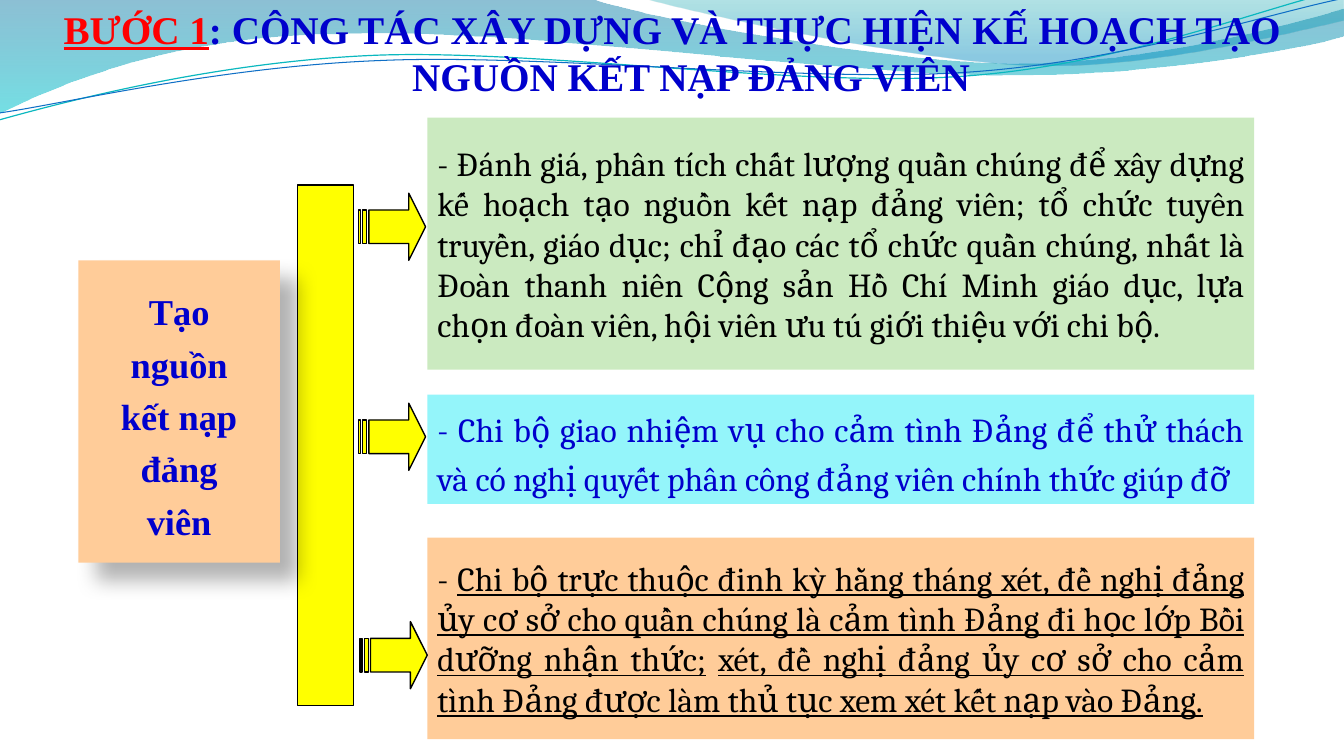
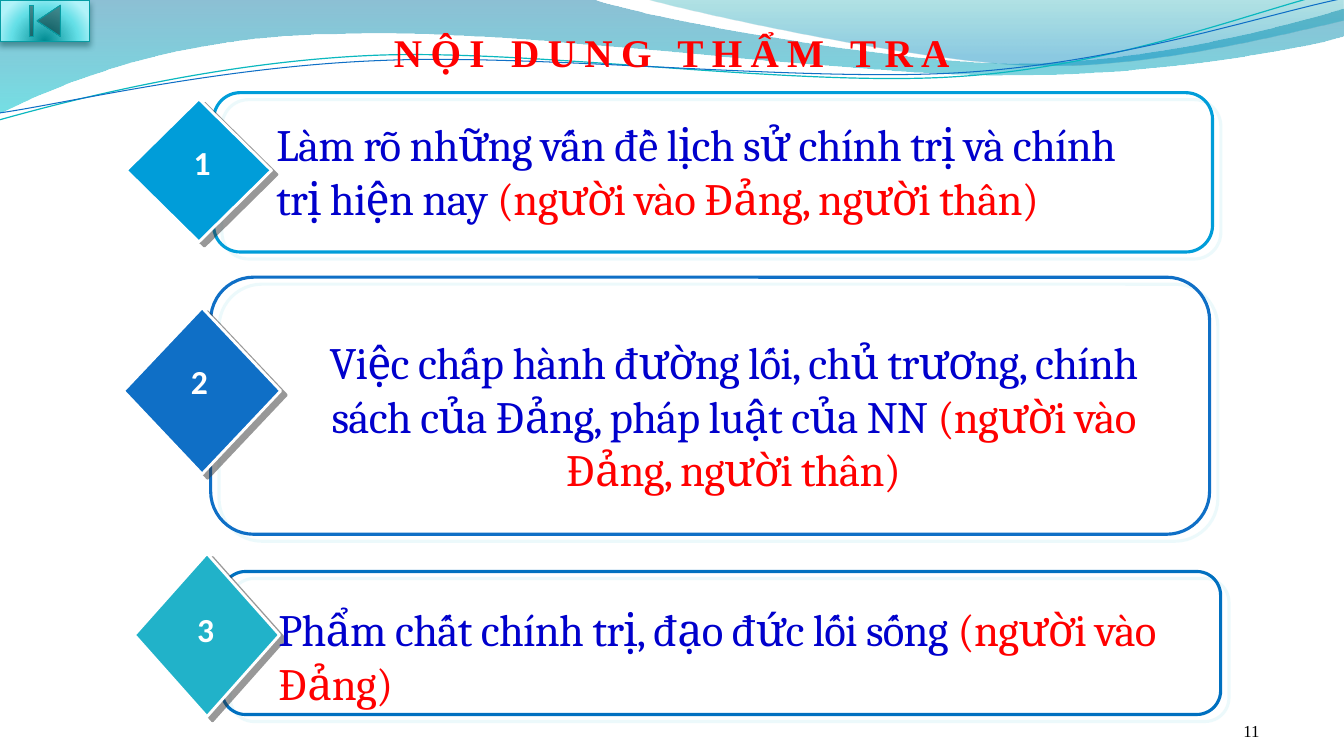
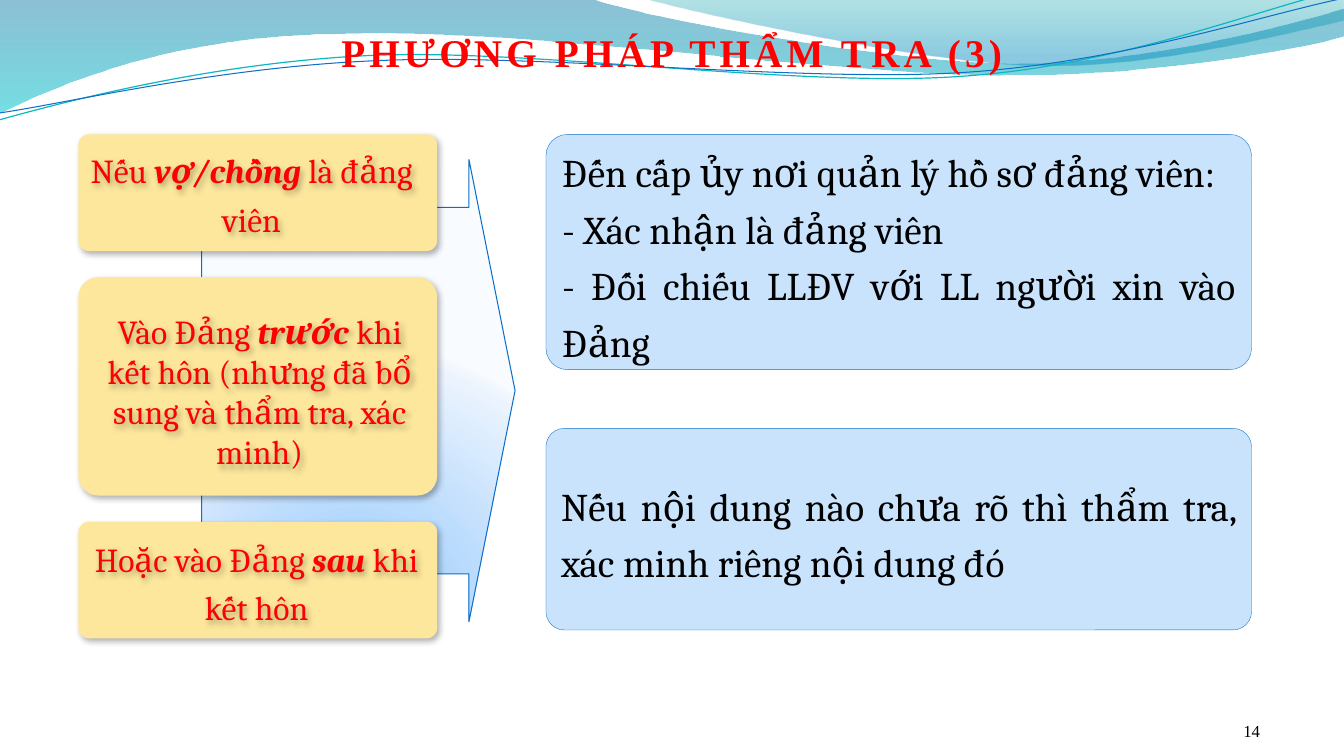
import pptx
import pptx.dml.color
import pptx.enum.shapes
import pptx.enum.text
import pptx.oxml
import pptx.oxml.ns
import pptx.util

Pt = pptx.util.Pt
RGB = pptx.dml.color.RGBColor
KIND = pptx.enum.shapes.MSO_SHAPE
ALIGN = pptx.enum.text.PP_ALIGN
ANCHOR = pptx.enum.text.MSO_ANCHOR
qn = pptx.oxml.ns.qn

# Colours
BLACK = RGB(0x00, 0x00, 0x00)
WHITE = RGB(0xFF, 0xFF, 0xFF)
RED = RGB(0xFF, 0x00, 0x00)
NAVY = RGB(0x00, 0x00, 0xCC)
BLUE = RGB(0x0F, 0x6F, 0xC6)
SKY = RGB(0x00, 0x9D, 0xD9)
AZURE = RGB(0x00, 0x70, 0xC0)
TEAL = RGB(0x21, 0xB2, 0xC9)
AQUA = RGB(0x0A, 0xB8, 0xBF)
RIM = RGB(0x06, 0x9C, 0xA3)
GREEN = RGB(0xCB, 0xEA, 0xC0)
CYAN = RGB(0x94, 0xF5, 0xFA)
PEACH = RGB(0xFF, 0xCC, 0x99)
YELLOW = RGB(0xFF, 0xFF, 0x00)
CREAM = RGB(0xFC, 0xE7, 0x9C)
PALE = RGB(0xC8, 0xE3, 0xFB)
MIST = RGB(0xDB, 0xF5, 0xF9)
GREY = RGB(0x33, 0x33, 0x33)
DEEP = RGB(0x02, 0x4B, 0x4E)

# Fonts
SERIF = "Times New Roman"
BODY = "Cambria"
SANS = "Calibri"

# Gradients: stops of (position, colour, opacity), all in percent
DOWN = '<a:lin ang="5400000" scaled="0"/>'
GLOW = ('<a:path path="circle"><a:fillToRect l="50000" t="130000" '
        'r="50000" b="-30000"/></a:path>')
WAVE = ([(0, RGB(0x00, 0x74, 0xA1), 45), (100, RGB(0x00, 0xC6, 0xCF), 55)], DOWN)
CREST = ([(0, RGB(0x00, 0xA1, 0xA9), 30), (80, RGB(0x00, 0x8B, 0xBF), 45)], DOWN)
ARROW = ([(0, RGB(0x8B, 0xC2, 0xF1), 100), (43, RGB(0xB9, 0xDB, 0xFD), 100),
          (93, RGB(0xEA, 0xF3, 0xFE), 100), (100, RGB(0xF8, 0xFB, 0xFF), 100)], GLOW)
BUTTON = ([(0, RGB(0x00, 0x8A, 0x91), 100), (68, RGB(0x64, 0xDF, 0xE7), 100),
           (100, RGB(0xB1, 0xF3, 0xF9), 100)], GLOW)

# Shadows: colour, opacity, blur, distance, angle
DROP = (BLACK, 30, 15, 18, 45)
SOFT = (BLACK, 30, 4.5, 2.6, 53)
HALO = (MIST, 50, 0, 7.8, 40)
HARD = (GREY, 50, 0, 5, 37)
UNDER = (DEEP, 48, 4.5, 3, 90)


def parse(tag, inner="", attrs=""):
    space = pptx.oxml.ns.nsdecls("a")
    return pptx.oxml.parse_xml(f"<a:{tag} {space} {attrs}>{inner}</a:{tag}>")


def tint(color, alpha):
    return f'<a:srgbClr val="{color}"><a:alpha val="{alpha * 1000}"/></a:srgbClr>'


def shade(shape, shadow):
    shape.shadow.inherit = False
    if shadow:
        color, alpha, blur, dist, angle = shadow
        attrs = (f'blurRad="{Pt(blur)}" dist="{Pt(dist)}" dir="{angle * 60000}" '
                 'algn="tl" rotWithShape="0"')
        effects = shape.element.spPr.find(qn("a:effectLst"))
        effects.append(parse("outerShdw", tint(color, alpha), attrs))


def paint(shape, fill=None, line=None, width=1, shadow=None):
    """Set fill (colour or gradient), line and shadow."""
    if fill is None:
        shape.fill.background()
    else:
        shape.fill.solid()
        if isinstance(fill, RGB):
            shape.fill.fore_color.rgb = fill
        else:
            stops, course = fill
            marks = "".join(f'<a:gs pos="{pos * 1000}">{tint(color, alpha)}</a:gs>'
                            for pos, color, alpha in stops)
            props = shape.element.spPr
            props.replace(props.find(qn("a:solidFill")),
                          parse("gradFill", f"<a:gsLst>{marks}</a:gsLst>{course}"))
    if line is None:
        shape.line.fill.background()
    else:
        shape.line.color.rgb = line
        shape.line.width = Pt(width)
    shade(shape, shadow)


def draw(slide, kind, box, adjust=(), **look):
    shape = slide.shapes.add_shape(kind, *map(Pt, box))
    for index, value in enumerate(adjust):
        shape.adjustments[index] = value
    paint(shape, **look)
    return shape


def write(shape, *parts, size=24, font=BODY, color=BLACK, bold=False,
          align=ALIGN.LEFT, anchor=ANCHOR.MIDDLE, leading=None, spacing=0,
          hang=0, indent=0, wrap=True):
    """Fill a shape with text; a part is a string or (string, font changes)."""
    frame = shape.text_frame
    frame.word_wrap = wrap
    frame.vertical_anchor = anchor
    para = frame.paragraphs[0]
    paras = [para]
    for part in parts:
        text, changes = (part, {}) if isinstance(part, str) else part
        for number, piece in enumerate(text.split("\n")):
            if number:
                para = frame.add_paragraph()
                paras.append(para)
            run = para.add_run()
            run.text = piece
            run.font.size = Pt(size)
            run.font.name = font
            run.font.bold = changes.get("bold", bold)
            run.font.italic = changes.get("italic", False)
            run.font.underline = changes.get("under", False)
            run.font.color.rgb = changes.get("color", color)
            if spacing:
                run.font._element.set("spc", str(round(spacing * 100)))
    for para in paras:
        para.alignment = align
        if leading:
            para.line_spacing = leading
        if hang or indent:
            props = para._p.get_or_add_pPr()
            props.set("marL", str(Pt(hang)))
            props.set("indent", str(Pt(indent)))


def label(slide, box, *parts, shadow=None, **form):
    shape = slide.shapes.add_textbox(*map(Pt, box))
    if shadow:
        shade(shape, shadow)
    write(shape, *parts, **{"anchor": ANCHOR.TOP, **form})


def trace(slide, start, legs, close=False, **look):
    """Draw an outline; a leg is a line's end or a curve's three points."""
    points = [(Pt(x), Pt(y)) for leg in legs for x, y in zip(leg[::2], leg[1::2])]
    pen = slide.shapes.build_freeform(*map(Pt, start), scale=1.0)
    pen.add_line_segments(points, close=close)
    shape = pen.convert_to_shape()

    # Join each curve's three points into one segment
    course = next(shape.element.spPr.iter(qn("a:path")))
    lines = iter(course.findall(qn("a:lnTo")))
    for leg in legs:
        group = [next(lines) for _ in leg[::2]]
        if len(group) == 3:
            curve = parse("cubicBezTo")
            group[0].addprevious(curve)
            for line in group:
                curve.append(line[0])
                course.remove(line)
    paint(shape, **look)
    return shape


def waves(deck, slide):
    """Draw the header waves and move them to the slide master."""
    shapes = [
        trace(slide, (0, -0.7), [
            (422.6, -0.7), (456.5, 12.2, 637.2, 45.4, 727.9, 45.4),
            (818.6, 45.4, 920.2, 18.7, 959.8, 6.5), (961.2, 25.9),
            (944, 31.7, 835.2, 54.7, 715.7, 54), (596.9, 54, 366.5, 20.2, 247, 24.5),
            (123.8, 25.2, 43.9, 59.8, -0.7, 81.4), (0, -0.7)], close=True, fill=WAVE),
        trace(slide, (460, -0.7), [
            (488.9, 7.9, 654.5, 44.6, 738, 46.8), (821.5, 49.7, 923, 23, 959.8, 15.1),
            (959.8, 0), (460, -0.7)], close=True, fill=CREST),
        trace(slide, (-0.7, 85.7), [
            (46.1, 72.7, 151.9, 44.6, 265.7, 39.6), (379.4, 34.6, 568.1, 62.6, 684, 54.7),
            (799.2, 47.5, 900.7, 5.8, 958.3, -7.2)], line=AQUA, width=0.85),
        trace(slide, (0, 80.6), [
            (45.4, 74.2, 157, 47.5, 272.2, 43.2), (386.6, 38.2, 573.1, 59, 687.6, 51.8),
            (802.8, 44.6, 903.6, 10.1, 960.5, -1.4)], line=BLUE, width=0.75),
    ]
    for shape in shapes:
        deck.slide_master.shapes.element.append(shape.element)


def head(slide, *parts, height=58.3, **form):
    label(slide, (0, 0, 960, height), *parts, size=28, font=SERIF, bold=True,
          align=ALIGN.CENTER, **form)


def page(slide, number):
    label(slide, (881, 511.2, 74.9, 21.6), number, size=12, font=SERIF)


def sources(slide):
    head(slide, ("BƯỚC 1", {"color": RED, "under": True}),
         ": CÔNG TÁC XÂY DỰNG VÀ THỰC HIỆN KẾ HOẠCH TẠO NGUỒN KẾT NẠP ĐẢNG VIÊN",
         height=75, color=NAVY, hang=27, indent=-27)

    # Task panels
    under = {"under": True}
    panels = [
        (84, 180, GREEN, {}, [
            "- Đánh giá, phân tích chất lượng quần chúng để xây dựng kế hoạch tạo nguồn "
            "kết nạp đảng viên; tổ chức tuyên truyền, giáo dục; chỉ đạo các tổ chức quần "
            "chúng, nhất là Đoàn thanh niên Cộng sản Hồ Chí Minh giáo dục, lựa chọn đoàn "
            "viên, hội viên ưu tú giới thiệu với chi bộ."]),
        (282, 78, CYAN, {"color": NAVY, "leading": 1.2, "indent": -27}, [
            "- Chi bộ giao nhiệm vụ cho cảm tình Đảng để thử thách và có nghị quyết phân "
            "công đảng viên chính thức giúp đỡ"]),
        (384, 144, PEACH, {}, [
            "- ",
            ("Chi bộ trực thuộc đinh kỳ hằng tháng xét, đề nghị đảng ủy cơ sở cho quần "
             "chúng là cảm tình Đảng đi học lớp Bồi dưỡng nhận thức;", under),
            " ",
            ("xét, đề nghị đảng ủy cơ sở cho cảm tình Đảng được làm thủ tục xem xét kết "
             "nạp vào Đảng.", under)]),
    ]
    for top, height, fill, form, parts in panels:
        panel = draw(slide, KIND.RECTANGLE, (305.3, top, 590.6, height), fill=fill)
        write(panel, *parts, align=ALIGN.JUSTIFY, **form)

    # Bar with arrows
    for left, top in [(256, 138), (256, 288), (257.2, 444)]:
        draw(slide, KIND.STRIPED_RIGHT_ARROW, (left, top, 48, 48), (0.5, 0.25),
             fill=YELLOW, line=BLACK)
    draw(slide, KIND.RECTANGLE, (212.4, 132, 40.2, 372), fill=YELLOW, line=BLACK)

    # Topic card
    card = draw(slide, KIND.RECTANGLE, (56, 186, 144, 216), fill=PEACH, shadow=DROP)
    write(card, "Tạo\nnguồn\nkết nạp\nđảng\nviên", size=26, font=SERIF, color=NAVY,
          bold=True, align=ALIGN.CENTER, leading=1.2, wrap=False)


def checks(slide):
    page(slide, "11")
    head(slide, "NỘI DUNG THẨM TRA", color=RED, leading=1.5, spacing=6)

    # Numbered rows: frame, diamond, text and number boxes
    rows = [
        (SKY, SKY, (152.6, 66.2, 713.5, 113.8), (90.2, 70.6, 103.7, 102.2),
         (190.3, 80, 643.7, 85), (115.2, 98), ALIGN.LEFT,
         "Làm rõ những vấn đề lịch sử chính trị và chính trị hiện nay ",
         "(người vào Đảng, người thân)"),
        (BLUE, BLUE, (150.5, 198, 713.5, 183.6), (88.2, 219.8, 112.3, 118.8),
         (198.2, 235.4, 651.6, 172.8), (113.3, 254.2), ALIGN.CENTER,
         "Việc chấp hành đường lối, chủ trương, chính sách của Đảng, pháp luật của NN ",
         "(người vào Đảng, người thân)"),
        (AZURE, TEAL, (158.4, 408.2, 713.5, 102.2), (96, 395.3, 103.7, 116.6),
         (191.8, 426.2, 663.8, 85), (117.8, 431.3), ALIGN.LEFT,
         "Phẩm chất chính trị, đạo đức lối sống ", "(người vào Đảng)"),
    ]
    for number, row in enumerate(rows, 1):
        edge, fill, frame, gem, box, spot, align, text, note = row
        draw(slide, KIND.ROUNDED_RECTANGLE, frame, (0.167,), line=edge, width=2.25,
             shadow=HALO)
        draw(slide, KIND.DIAMOND, gem, fill=fill, line=WHITE, width=2, shadow=HARD)
        label(slide, box, text, (note, {"color": RED}), size=32, color=NAVY,
              spacing=-0.5, align=align)
        label(slide, (*spot, 58.3, 50), str(number), font=SANS, color=WHITE, bold=True,
              align=ALIGN.CENTER)

    # Back button
    draw(slide, KIND.ACTION_BUTTON_BEGINNING, (0, 0, 64.1, 29.8), fill=BUTTON,
         line=RIM, width=0.75, shadow=UNDER)


def methods(slide):
    page(slide, "14")
    head(slide, "PHƯƠNG PHÁP THẨM TRA (3)", color=RED, leading=1.5, spacing=3)
    draw(slide, KIND.RIGHT_ARROW, (144, 114, 223.9, 330), (0.793, 0.147),
         fill=ARROW, line=BLUE, width=0.75)

    # Actions
    actions = [
        (96, 168, "Đến cấp ủy nơi quản lý hồ sơ đảng viên:\n- Xác nhận là đảng viên\n"
                  "- Đối chiếu LLĐV với LL người xin vào Đảng"),
        (306, 144, "Nếu nội dung nào chưa rõ thì thẩm tra, xác minh riêng nội dung đó"),
    ]
    for top, height, text in actions:
        card = draw(slide, KIND.ROUNDED_RECTANGLE, (390, top, 504, height), (0.091,),
                    fill=PALE, line=BLUE, width=0.25)
        write(card, text, size=28, align=ALIGN.JUSTIFY, leading=1.2)

    # Cases, stacked with equal gaps: height, text offset, leading, wording
    strong = {"bold": True, "italic": True}
    cases = [
        (83.3, 0.2, 2, 1.2, "Nếu ", "vợ/chồng ", "là đảng viên"),
        (156, 6, 20.2, None, "Vào Đảng ", "trước ",
         "khi kết hôn (nhưng đã bổ sung và thẩm tra, xác minh)"),
        (83.3, 3.8, 2.9, 1.2, "Hoặc vào Đảng ", "sau ", "khi kết hôn"),
    ]
    left, top, gap = 56, 96, 18.7
    for height, right, down, leading, start, key, end in cases:
        draw(slide, KIND.ROUNDED_RECTANGLE, (left, top, 256.3, height), (0.091,),
             fill=CREAM, shadow=SOFT)
        label(slide, (left + right, top + down, 247, height - 2 * down),
              start, (key, strong), end, color=RED, align=ALIGN.CENTER,
              leading=leading, shadow=SOFT)
        top += height + gap


def main():
    deck = pptx.Presentation()
    deck.slide_width, deck.slide_height = Pt(960), Pt(540)
    for index, build in enumerate((sources, checks, methods)):
        slide = deck.slides.add_slide(deck.slide_layouts[6])
        if index == 0:
            waves(deck, slide)
        build(slide)
    deck.save("out.pptx")


if __name__ == "__main__":
    main()
